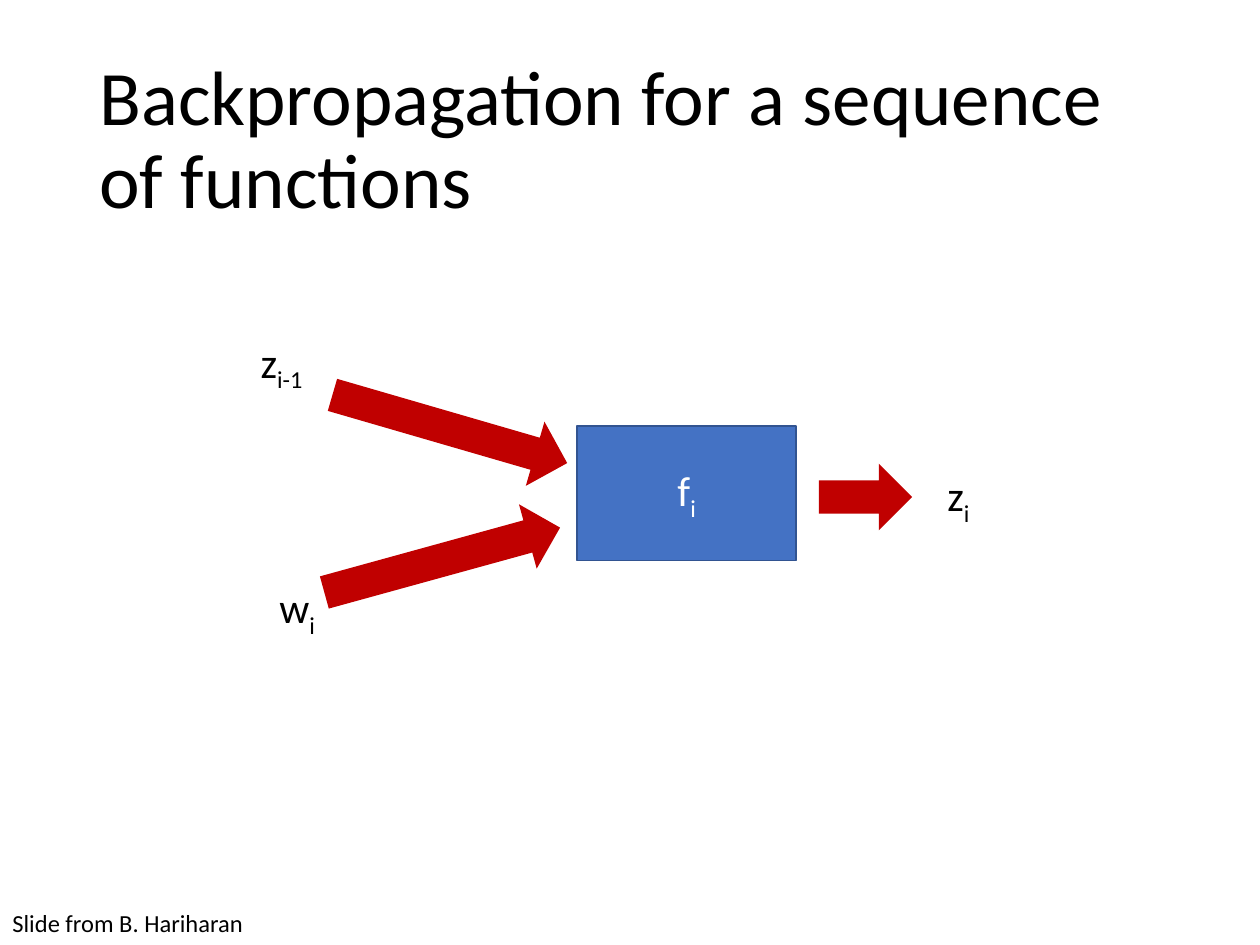
from pptx import Presentation
from pptx.dml.color import RGBColor
from pptx.enum.shapes import MSO_SHAPE
from pptx.enum.text import MSO_ANCHOR, PP_ALIGN
from pptx.util import Inches, Pt

BLACK = RGBColor(0x00, 0x00, 0x00)
WHITE = RGBColor(0xFF, 0xFF, 0xFF)
BLUE = RGBColor(0x44, 0x72, 0xC4)
DARK_BLUE = RGBColor(0x32, 0x54, 0x91)
RED = RGBColor(0xC0, 0x00, 0x00)

RECTANGLE = MSO_SHAPE.RECTANGLE
RIGHT_ARROW = MSO_SHAPE.RIGHT_ARROW
TOP, MIDDLE = MSO_ANCHOR.TOP, MSO_ANCHOR.MIDDLE
LEFT, CENTER = PP_ALIGN.LEFT, PP_ALIGN.CENTER

SLIDE_WIDTH, SLIDE_HEIGHT = Inches(10), Inches(7.5)
COLUMNS, ROWS = 100, 75
BLANK_LAYOUT = 6
SUBSCRIPT = "-25000"
ARROW_HEIGHT = 5.3
INPUT_ARROW_WIDTH = 19.4
LABEL_HEIGHT = 5


def place(column, row, width, height):
    across, down = SLIDE_WIDTH / COLUMNS, SLIDE_HEIGHT / ROWS
    return [round(length) for length in
            (column * across, row * down, width * across, height * down)]


def set_values(target, values):
    for name, value in values.items():
        setattr(target, name, value)


def write(box, text, subscript="", size=24, color=BLACK, anchor=TOP,
          align=LEFT, spacing=1.0):
    set_values(box.text_frame, {"word_wrap": True, "vertical_anchor": anchor})
    para = box.text_frame.paragraphs[0]
    set_values(para, {"alignment": align, "line_spacing": spacing})
    for content in filter(None, (text, subscript)):
        span = para.add_run()
        span.text = content
        set_values(span.font, {"name": "Calibri", "size": Pt(size)})
        span.font.color.rgb = color
        if content == subscript:
            span._r.get_or_add_rPr().set("baseline", SUBSCRIPT)


def add_text(page, area, text, **style):
    write(page.shapes.add_textbox(*place(*area)), text, **style)


def add_solid(page, kind, area, fill):
    shape = page.shapes.add_shape(kind, *place(*area))
    shape.shadow.inherit = False
    shape.fill.solid()
    shape.fill.fore_color.rgb = fill
    shape.line.fill.background()
    return shape


def add_function(page, area, text, subscript):
    box = add_solid(page, RECTANGLE, area, BLUE)
    box.line.color.rgb = DARK_BLUE
    box.line.width = Pt(1)
    write(box, text, subscript, color=WHITE, anchor=MIDDLE, align=CENTER)


def add_arrow(page, column, row, width, rotation=0):
    arrow = add_solid(page, RIGHT_ARROW, (column, row, width, ARROW_HEIGHT), RED)
    arrow.rotation = rotation


def main():
    deck = Presentation()
    set_values(deck, {"slide_width": SLIDE_WIDTH, "slide_height": SLIDE_HEIGHT})
    page = deck.slides.add_slide(deck.slide_layouts[BLANK_LAYOUT])

    add_text(page, (6.9, 4, 86.2, 14.5),
             "Backpropagation for a sequence of functions",
             size=44, anchor=MIDDLE, spacing=0.9)
    add_function(page, (45.8, 33.8, 17.4, 10.7), "f", "i")

    for column, row, width, text, subscript in (
        (19.7, 26.2, 7, "z", "i-1"),
        (74.2, 36.8, 5.4, "z", "i"),
        (21.2, 45.7, 5.4, "w", "i"),
    ):
        add_text(page, (column, row, width, LABEL_HEIGHT), text,
                 subscript=subscript)

    add_arrow(page, 65, 36.8, 7.4)
    add_arrow(page, 26, 31.4, INPUT_ARROW_WIDTH, 16.2)
    add_arrow(page, 25.4, 41.8, INPUT_ARROW_WIDTH, 344.6)

    add_text(page, (0, 71.6, 20.7, 3.4), "Slide from B. Hariharan", size=14)
    deck.save("out.pptx")


if __name__ == "__main__":
    main()
